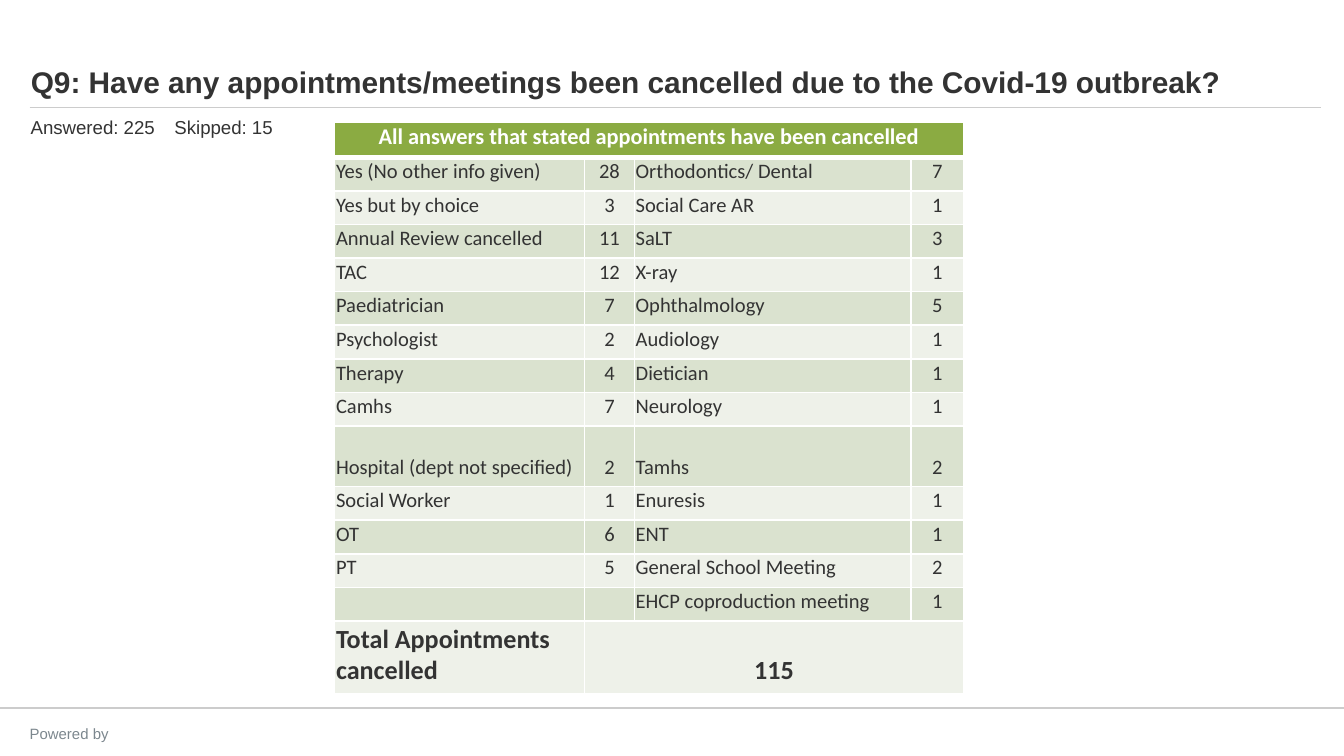
"""Build the survey slide on appointments cancelled because of Covid-19."""
from dataclasses import dataclass

from lxml.etree import SubElement
from pptx import Presentation
from pptx.dml.color import RGBColor
from pptx.enum.shapes import MSO_CONNECTOR
from pptx.enum.text import MSO_ANCHOR, MSO_AUTO_SIZE, PP_ALIGN
from pptx.oxml.ns import qn
from pptx.slide import Slide
from pptx.util import Inches, Pt

SLIDE_WIDTH = 10
SLIDE_HEIGHT = SLIDE_WIDTH * 9 / 16
COLUMN_WIDTHS = [1.86, 0.37, 2.06, 0.39]
ROW_HEIGHTS = [0.26] + [0.25] * 8 + [0.45] + [0.25] * 4 + [0.54]
ANSWERS = [
    ("Yes (No other info given)", "28", "Orthodontics/ Dental", "7"),
    ("Yes but by choice", "3", "Social Care AR", "1"),
    ("Annual Review cancelled", "11", "SaLT", "3"),
    ("TAC", "12", "X-ray", "1"),
    ("Paediatrician", "7", "Ophthalmology", "5"),
    ("Psychologist", "2", "Audiology", "1"),
    ("Therapy", "4", "Dietician", "1"),
    ("Camhs", "7", "Neurology", "1"),
    ("Hospital (dept not specified)", "2", "Tamhs", "2"),
    ("Social Worker", "1", "Enuresis", "1"),
    ("OT", "6", "ENT", "1"),
    ("PT", "5", "General School Meeting", "2"),
    ("", "", "EHCP coproduction meeting", "1"),
]
HEADING = "All answers that stated appointments have been cancelled"
ROWS = [(HEADING, "", "", ""), *ANSWERS, ("Total Appointments cancelled", "115", "", "")]


def color(value):
    return RGBColor.from_string(value)


@dataclass
class SurveySlide:
    slide: Slide
    ink: str = "333333"
    rule_color: str = "CCCCCC"
    header_fill: str = "8BAB42"
    bands: tuple = ("EEF1E9", "DAE2CF")
    font: str = "Arial"
    table_font: str = "Calibri"

    def format(self, paragraph, size, ink, font, bold=False, align=PP_ALIGN.LEFT):
        paragraph.alignment = align
        paragraph.font.name = font
        paragraph.font.size = Pt(size)
        paragraph.font.bold = bold
        paragraph.font.color.rgb = color(ink)

    def title(self, wording, left, top, width, height):
        title = self.slide.shapes.title
        title.left, title.top = Inches(left), Inches(top)
        title.width, title.height = Inches(width), Inches(height)
        frame = title.text_frame
        frame.text = wording
        frame.auto_size = MSO_AUTO_SIZE.NONE
        frame.vertical_anchor = MSO_ANCHOR.BOTTOM
        self.format(frame.paragraphs[0], 16, self.ink, self.font, bold=True)

    def text(self, wording, left, top, width, height, size, ink, align=PP_ALIGN.LEFT, tab=None):
        box = self.slide.shapes.add_textbox(Inches(left), Inches(top), Inches(width), Inches(height))
        frame = box.text_frame
        frame.word_wrap = True
        frame.text = wording
        paragraph = frame.paragraphs[0]
        if tab:
            stops = SubElement(paragraph._p.get_or_add_pPr(), qn("a:tabLst"))
            SubElement(stops, qn("a:tab"), pos=str(Inches(tab)), algn="l")
        self.format(paragraph, size, ink, self.font, align=align)

    def rule(self, left, right, top, weight):
        line = self.slide.shapes.add_connector(
            MSO_CONNECTOR.STRAIGHT, Inches(left), Inches(top), Inches(right), Inches(top))
        line.line.color.rgb = color(self.rule_color)
        line.line.width = Pt(weight)
        SubElement(line._element.spPr, qn("a:effectLst"))

    def borders(self, cell, bottom):
        properties = cell._tc.get_or_add_tcPr()
        for side, weight in (("L", 1), ("R", 1), ("T", 1), ("B", bottom)):
            border = SubElement(properties, qn(f"a:ln{side}"), w=str(Pt(weight)))
            fill = SubElement(border, qn("a:solidFill"))
            SubElement(fill, qn("a:srgbClr"), val="FFFFFF")

    def cell(self, cell, wording, fill, size, ink, bold, align, bottom):
        self.borders(cell, bottom)
        cell.fill.solid()
        cell.fill.fore_color.rgb = color(fill)
        cell.margin_left = cell.margin_right = cell.margin_top = Inches(0.01)
        cell.margin_bottom = Inches(0.05)
        cell.vertical_anchor = MSO_ANCHOR.BOTTOM
        cell.text = wording
        paragraph = cell.text_frame.paragraphs[0]
        self.format(paragraph, size, ink, self.table_font, bold, align)
        if not wording:
            SubElement(paragraph._p, qn("a:endParaRPr"), sz=str(size * 100))

    def table(self, rows, left, top):
        table = self.slide.shapes.add_table(
            len(rows), len(COLUMN_WIDTHS), Inches(left), Inches(top),
            Inches(sum(COLUMN_WIDTHS)), Inches(sum(ROW_HEIGHTS))).table
        table.horz_banding = False
        for column, width in zip(table.columns, COLUMN_WIDTHS):
            column.width = Inches(width)
        for row, height in zip(table.rows, ROW_HEIGHTS):
            row.height = Inches(height)
        last = len(rows) - 1
        for r, answers in enumerate(rows):
            heading, total = r == 0, r == last
            fill = self.header_fill if heading else self.bands[r % 2]
            ink = "FFFFFF" if heading else self.ink
            size = 12 if heading else 14 if total else 11
            for c, wording in enumerate(answers):
                align = PP_ALIGN.CENTER if heading or c % 2 else PP_ALIGN.LEFT
                self.cell(table.cell(r, c), wording, fill, size, ink,
                          heading or total, align, 3 if heading else 1)
        table.cell(0, 0).merge(table.cell(0, 3))
        table.cell(last, 1).merge(table.cell(last, 3))


def main():
    deck = Presentation()
    deck.slide_width, deck.slide_height = Inches(SLIDE_WIDTH), Inches(SLIDE_HEIGHT)
    survey = SurveySlide(deck.slides.add_slide(deck.slide_layouts[5]))
    survey.rule(0, SLIDE_WIDTH, 5.27, 1)
    survey.rule(0.22, 9.83, 0.8, 0.5)
    survey.text("Powered by", 0, 5.34, 1.03, 0.18, 8, "7C878E", PP_ALIGN.CENTER)
    survey.title("Q9: Have any appointments/meetings been cancelled due to the Covid-19 outbreak?",
                 0.13, 0.36, 10.04, 0.43)
    survey.text("Answered: 225\tSkipped: 15", 0.13, 0.81, 5.83, 0.27, 10, survey.ink, tab=1.07)
    survey.table(ROWS, 2.49, 0.91)
    deck.save("out.pptx")


if __name__ == "__main__":
    main()
